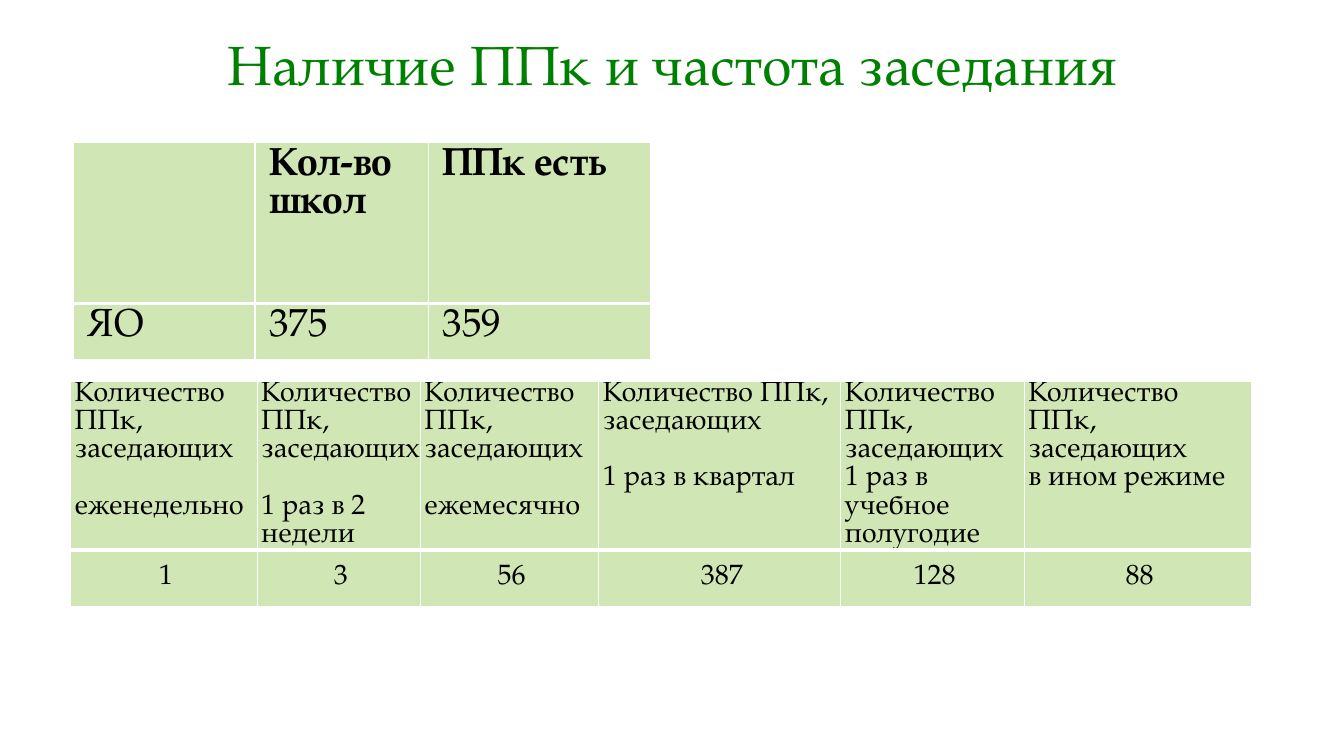
from dataclasses import dataclass

from lxml.etree import SubElement
from pptx import Presentation
from pptx.dml.color import RGBColor
from pptx.enum.text import MSO_ANCHOR, MSO_AUTO_SIZE, PP_ALIGN
from pptx.oxml.ns import qn
from pptx.util import Inches, Pt


@dataclass(frozen=True)
class Theme:
    font: str = "TeX Gyre Pagella"
    title_color: str = "008000"
    text_color: str = "000000"
    cell_color: str = "D1E6B5"
    border_color: str = "FFFFFF"
    title_size: float = 39.6
    summary_size: float = 28
    frequency_size: float = 20


THEME = Theme()
ROW_HEIGHTS = (1.6, 0.56)
COUNT_LABEL = "Количество ППк, заседающих"
FREQUENCIES = [
    ("еженедельно", True, "1"),
    ("1 раз в 2 недели", True, "3"),
    ("ежемесячно", True, "56"),
    ("1 раз в квартал", True, "387"),
    ("1 раз в учебное полугодие", False, "128"),
    ("в ином режиме", False, "88"),
]


def add_run(paragraph, text, size, color, bold=False):
    run = paragraph.add_run()
    run.text = text
    run.font.name = THEME.font
    run.font.size = Pt(size)
    run.font.bold = bold
    run.font.color.rgb = RGBColor.from_string(color)


def add_title(slide, text):
    title = slide.shapes.title
    title.left, title.top = Inches(0.92), Inches(0.4)
    title.width, title.height = Inches(11.5), Inches(0.54)
    frame = title.text_frame
    frame.word_wrap = True
    frame.auto_size = MSO_AUTO_SIZE.NONE
    frame.vertical_anchor = MSO_ANCHOR.MIDDLE
    paragraph = frame.paragraphs[0]
    paragraph.alignment = PP_ALIGN.CENTER
    paragraph.line_spacing = 0.9
    add_run(paragraph, text, THEME.title_size, THEME.title_color)


def set_borders(cell, bottom_width):
    properties = cell._tc.get_or_add_tcPr()
    widths = {"a:lnL": 1, "a:lnR": 1, "a:lnT": 1, "a:lnB": bottom_width}
    for index, (tag, width) in enumerate(widths.items()):
        line = SubElement(properties, qn(tag), w=str(Pt(width)))
        fill = SubElement(line, qn("a:solidFill"))
        SubElement(fill, qn("a:srgbClr"), val=THEME.border_color)
        properties.insert(index, line)


def add_grid(slide, left, top, column_widths):
    table = slide.shapes.add_table(
        len(ROW_HEIGHTS), len(column_widths), Inches(left), Inches(top),
        Inches(sum(column_widths)), Inches(sum(ROW_HEIGHTS)),
    ).table
    table.horz_banding = False
    for column, width in zip(table.columns, column_widths):
        column.width = Inches(width)
    for row, height, bottom_width in zip(table.rows, ROW_HEIGHTS, (3, 1)):
        row.height = Inches(height)
        for cell in row.cells:
            cell.fill.solid()
            cell.fill.fore_color.rgb = RGBColor.from_string(THEME.cell_color)
            set_borders(cell, bottom_width)
    return table


def fill_cell(cell, texts, size, bold=False, alignment=PP_ALIGN.LEFT, gap=0):
    frame = cell.text_frame
    for index, text in enumerate(texts):
        paragraph = frame.add_paragraph() if index else frame.paragraphs[0]
        paragraph.alignment = alignment
        paragraph.space_before = Pt(gap if index else 0)
        paragraph._p.get_or_add_pPr().set("marL", str(Inches(0.04)))
        add_run(paragraph, text, size, THEME.text_color, bold)


def add_summary_table(slide):
    table = add_grid(slide, 0.73, 1.41, (1.8, 1.72, 2.2))
    rows = [("", "Кол-во школ", "ППк есть"), ("ЯО", "375", "359")]
    for row_index, row in enumerate(rows):
        for column_index, text in enumerate(row):
            if text:
                cell = table.cell(row_index, column_index)
                fill_cell(cell, [text], THEME.summary_size, bold=row_index == 0)


def add_frequency_table(slide):
    table = add_grid(slide, 0.7, 3.78, (1.85, 1.62, 1.77, 2.4, 1.82, 2.25))
    size = THEME.frequency_size
    for cell in table.iter_cells():
        cell.margin_left = cell.margin_right = 0
        cell.margin_top = cell.margin_bottom = 0
    for column, (frequency, spaced, count) in enumerate(FREQUENCIES):
        header, value = table.cell(0, column), table.cell(1, column)
        fill_cell(header, [COUNT_LABEL, frequency], size, gap=size if spaced else 0)
        fill_cell(value, [count], size, alignment=PP_ALIGN.CENTER)
        value.vertical_anchor = MSO_ANCHOR.MIDDLE


def main():
    presentation = Presentation()
    presentation.slide_width = Inches(13.33)
    presentation.slide_height = Inches(7.5)
    slide = presentation.slides.add_slide(presentation.slide_layouts[5])
    add_title(slide, "Наличие ППк и частота заседания")
    add_summary_table(slide)
    add_frequency_table(slide)
    presentation.save("out.pptx")


if __name__ == "__main__":
    main()
